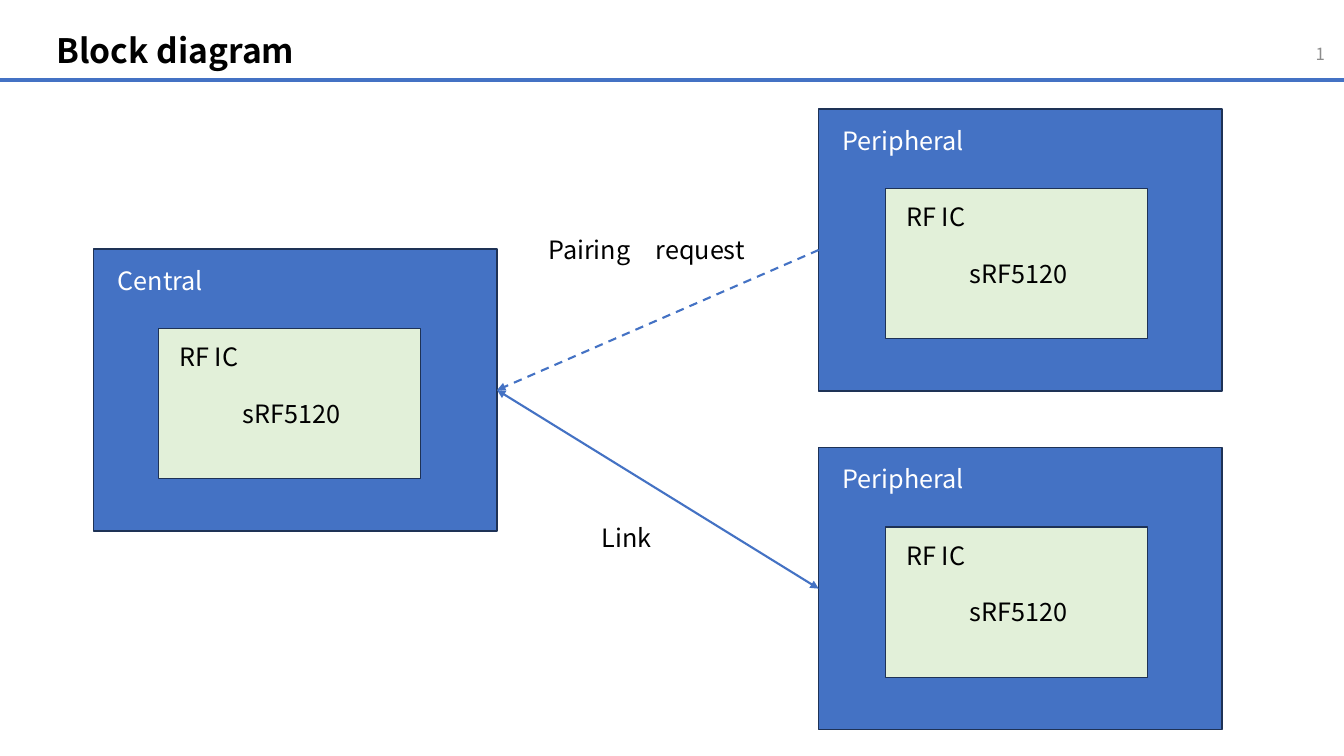
"""Build the block diagram slide of a central linked to two peripherals."""
from lxml import etree
from pptx import Presentation
from pptx.dml.color import RGBColor
from pptx.enum.dml import MSO_LINE
from pptx.enum.shapes import MSO_CONNECTOR, MSO_SHAPE
from pptx.enum.text import MSO_ANCHOR, MSO_AUTO_SIZE, PP_ALIGN
from pptx.oxml.ns import qn
from pptx.util import Inches, Pt

RECTANGLE = MSO_SHAPE.RECTANGLE
STRAIGHT = MSO_CONNECTOR.STRAIGHT
MIDDLE = MSO_ANCHOR.MIDDLE
GROW = MSO_AUTO_SIZE.SHAPE_TO_FIT_TEXT
LEFT, RIGHT = PP_ALIGN.LEFT, PP_ALIGN.RIGHT
DASH, SOLID = MSO_LINE.DASH, MSO_LINE.SOLID
LEFT_SIDE, RIGHT_SIDE = 1, 3
FONT = "Noto Sans CJK JP"
COLORS = {
    "blue": "4472C4",
    "outline": "1E3256",
    "green": "E2F0D9",
    "black": "000000",
    "white": "FFFFFF",
    "gray": "8C8C8C",
}

prs = Presentation()
prs.slide_width, prs.slide_height = Inches(13.33), Inches(7.5)
slide = prs.slides.add_slide(prs.slide_layouts[5])
shapes = slide.shapes


def write(frame, text, color="black", size=18, bold=False, align=LEFT):
    """Put one formatted line into a text frame and return its run."""
    frame.word_wrap = True
    paragraph = frame.paragraphs[0]
    paragraph.alignment = align
    run = paragraph.add_run()
    run.text = text
    formats = {"name": FONT, "size": Pt(size), "bold": bold}
    for key, value in formats.items():
        setattr(run.font, key, value)
    run.font.color.rgb = RGBColor.from_string(COLORS[color])
    return run


def style_line(connector, width, dash=SOLID, ends=()):
    """Give a connector its blue line, arrowheads and no shadow."""
    connector.line.color.rgb = RGBColor.from_string(COLORS["blue"])
    connector.line.width = Pt(width)
    connector.line.dash_style = dash
    for end in ends:
        etree.SubElement(connector.line._get_or_add_ln(), qn(f"a:{end}"), type="triangle")
    etree.SubElement(connector._element.spPr, qn("a:effectLst"))


title_rule = shapes.add_connector(STRAIGHT, 0, Inches(0.79), Inches(13.33), Inches(0.79))
style_line(title_rule, 3)

title = shapes.title
title.left, title.top = Inches(0.46), Inches(0.26)
title.width, title.height = Inches(12.47), Inches(0.53)
title.text_frame.vertical_anchor = MIDDLE
write(title.text_frame, "Block diagram", size=24, bold=True)
title.text_frame.paragraphs[0].line_spacing = 0.9

page_number = shapes.add_textbox(Inches(10.24), Inches(0.33), Inches(3), Inches(0.4))
page_number.text_frame.vertical_anchor = MIDDLE
number_run = write(page_number.text_frame, "1", "gray", 12, align=RIGHT)._r
number_field = etree.Element(
    qn("a:fld"), id="{B6F15528-21DE-4FAA-801E-634DDDAF4B2B}", type="slidenum"
)
number_run.addprevious(number_field)
number_field.extend(list(number_run))
number_run.getparent().remove(number_run)

devices = []
for role, left, top, chip_inset, role_width in [
    ("Central", 0.93, 2.47, 0.64, 1.24),
    ("Peripheral", 8.12, 4.44, 0.66, 1.53),
    ("Peripheral", 8.12, 1.08, 0.66, 1.53),
]:
    chip_left, chip_top = left + chip_inset, top + 0.79
    for x, y, width, height, fill in [
        (left, top, 4, 2.8, "blue"),
        (chip_left, chip_top, 2.6, 1.49, "green"),
    ]:
        block = shapes.add_shape(RECTANGLE, Inches(x), Inches(y), Inches(width), Inches(height))
        block.shadow.inherit = False
        block.fill.solid()
        block.fill.fore_color.rgb = RGBColor.from_string(COLORS[fill])
        block.line.color.rgb = RGBColor.from_string(COLORS["outline"])
        block.line.width = Pt(1)
        if fill == "blue":
            devices.append(block)
    for text, x, y, width, color in [
        (role, left + 0.14, top + 0.11, role_width, "white"),
        ("RF IC", chip_left + 0.11, chip_top + 0.08, 1.24, "black"),
        ("sRF5120", chip_left + 0.74, chip_top + 0.64, 1.24, "black"),
    ]:
        label = shapes.add_textbox(Inches(x), Inches(y), Inches(width), Inches(0.4))
        label.text_frame.auto_size = GROW
        write(label.text_frame, text, color)

central, linked_peripheral, pairing_peripheral = devices
for peripheral, dash, ends, text, x, y, width in [
    (linked_peripheral, SOLID, ("headEnd", "tailEnd"), "Link", 5.87, 5.13, 1.66),
    (pairing_peripheral, DASH, ("tailEnd",), "Pairing　request", 5.34, 2.28, 2.64),
]:
    arrow = shapes.add_connector(STRAIGHT, 0, 0, 0, 0)
    arrow.begin_connect(peripheral, LEFT_SIDE)
    arrow.end_connect(central, RIGHT_SIDE)
    style_line(arrow, 1.5, dash, ends)
    caption = shapes.add_textbox(Inches(x), Inches(y), Inches(width), Inches(0.4))
    caption.text_frame.auto_size = GROW
    write(caption.text_frame, text)

prs.save("out.pptx")
